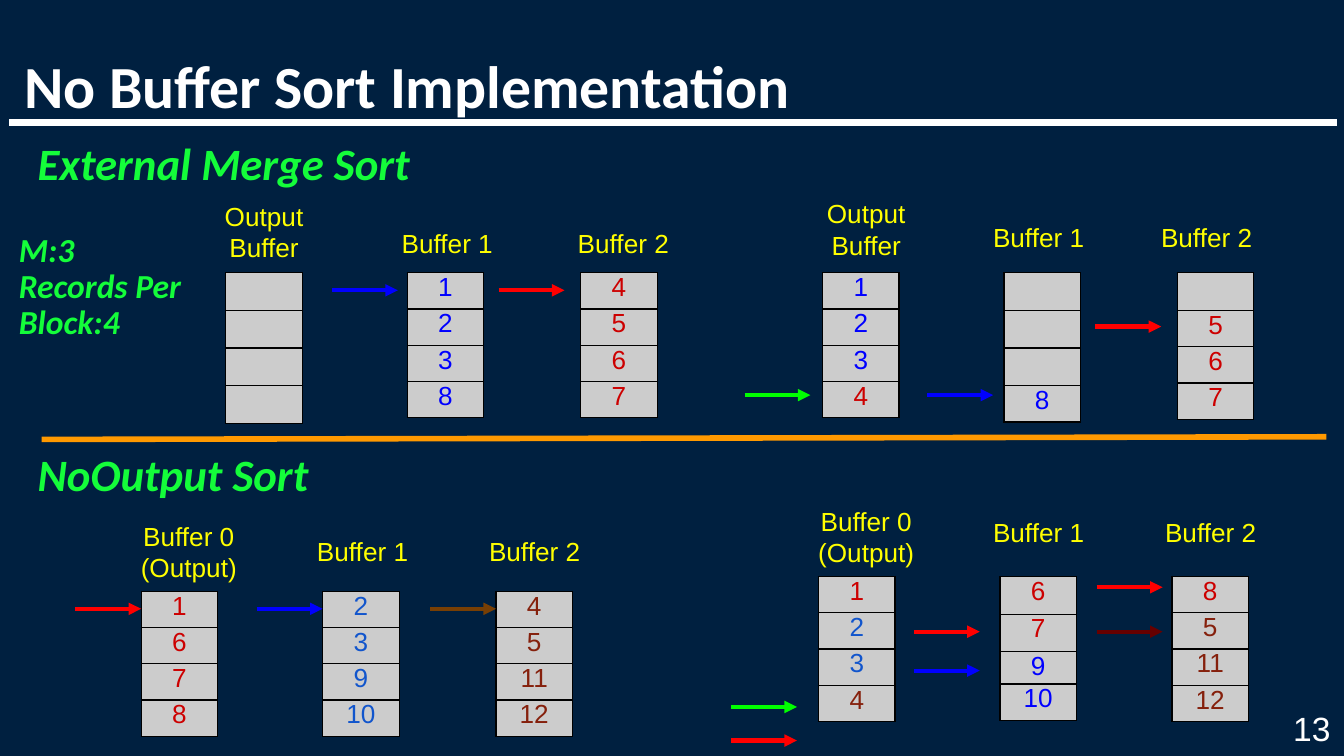
"""Build the slide comparing external merge sort buffers with NoOutput sort buffers."""
from lxml.etree import SubElement
from pptx import Presentation
from pptx.dml.color import RGBColor
from pptx.enum.shapes import MSO_CONNECTOR
from pptx.enum.text import MSO_ANCHOR, PP_ALIGN
from pptx.oxml.ns import qn
from pptx.util import Inches, Pt

NAVY = RGBColor(0x00, 0x20, 0x40)
WHITE = RGBColor(0xFF, 0xFF, 0xFF)
BLACK = RGBColor(0x00, 0x00, 0x00)
GRAY = RGBColor(0xCC, 0xCC, 0xCC)
YELLOW = RGBColor(0xFF, 0xFF, 0x00)
ORANGE = RGBColor(0xFF, 0x99, 0x00)
HEADING_GREEN = RGBColor(0x14, 0xFD, 0x3A)
GREEN = RGBColor(0x00, 0xFF, 0x00)
RED = RGBColor(0xFF, 0x00, 0x00)
BLUE = RGBColor(0x00, 0x00, 0xFF)
BROWN = RGBColor(0x78, 0x3F, 0x04)
MAROON = RGBColor(0x66, 0x00, 0x00)
RECORD_RED = RGBColor(0xCC, 0x00, 0x00)
RECORD_BLUE = RGBColor(0x11, 0x55, 0xCC)
RECORD_BROWN = RGBColor(0x85, 0x20, 0x0C)

TITLE = "No Buffer Sort Implementation"
PAGE_NUMBER = "13"

HEADINGS = [
    ("External Merge Sort", 24, (0.08, 1.01, 3.29, 0.39)),
    ("NoOutput Sort", 24, (0.08, 3.32, 2.33, 0.39)),
    ("M:3\nRecords Per Block:4", 18, (-0.06, 1.69, 1.61, 0.95)),
]

EMPTY = ("", BLACK)
ROW_HEIGHT, EMPTY_ROW_HEIGHT, BUFFER_WIDTH = 0.27, 0.28, 0.57
UNEVEN_ROWS = [0.28, 0.28, 0.24, 0.27]


def records(values, color):
    return [(value, color) for value in values.split()]


BUFFERS = [
    ((1.05, 4.4), "Buffer 0\n(Output)", (0.9, 3.77), records("1 6 7 8", RECORD_RED), None),
    ((2.4, 4.4), "Buffer 1", (2.26, 3.88), records("2 3 9 10", RECORD_BLUE), None),
    ((3.69, 4.4), "Buffer 2", (3.54, 3.88), records("4 5 11 12", RECORD_BROWN), None),
    ((6.09, 4.29), "Buffer 0\n(Output)", (5.94, 3.66),
     records("1", RECORD_RED) + records("2 3", RECORD_BLUE) + records("4", RECORD_BROWN), None),
    ((7.44, 4.29), "Buffer 1", (7.29, 3.74),
     records("6 7", RECORD_RED) + records("9 10", BLUE), UNEVEN_ROWS),
    ((8.72, 4.29), "Buffer 2", (8.57, 3.74),
     records("8", RECORD_RED) + records("5 11 12", RECORD_BROWN), None),
    ((1.68, 2.03), "Output\nBuffer", (1.46, 1.39), [EMPTY] * 4, None),
    ((3.03, 2.03), "Buffer 1", (2.89, 1.59), records("1 2 3 8", BLUE), None),
    ((4.32, 2.03), "Buffer 2", (4.2, 1.59), records("4 5 6 7", RECORD_RED), None),
    ((6.12, 2.03), "Output\nBuffer", (5.94, 1.37),
     records("1 2 3", BLUE) + records("4", RECORD_RED), None),
    ((7.47, 2.03), "Buffer 1", (7.29, 1.55), [EMPTY] * 3 + records("8", BLUE), None),
    ((8.76, 2.03), "Buffer 2", (8.54, 1.55), [EMPTY] + records("5 6 7", RECORD_RED), None),
]

ARROW_LENGTH = 0.49
ARROWS = [
    (0.56, 4.53, RED), (1.91, 4.53, BLUE), (3.2, 4.53, BROWN),
    (5.44, 5.51, RED), (5.44, 5.26, GREEN), (6.8, 4.99, BLUE),
    (8.16, 4.7, MAROON), (6.8, 4.7, RED), (8.16, 4.37, RED),
    (5.54, 2.94, GREEN), (6.9, 2.94, BLUE), (8.15, 2.43, RED),
    (2.47, 2.16, BLUE), (3.71, 2.16, RED),
]


def write(frame, text, size, color, font="Arial", bold=False, italic=False,
          align=PP_ALIGN.LEFT, spacing=None, insets=(0.1, 0.1, 0.1, 0.1)):
    frame.margin_left, frame.margin_top, frame.margin_right, frame.margin_bottom = map(Inches, insets)
    frame.word_wrap = True
    frame.text = text
    for paragraph in frame.paragraphs:
        paragraph.alignment = align
        if spacing:
            paragraph.line_spacing = spacing
        for run in paragraph.runs:
            run.font.name, run.font.size = font, Pt(size)
            run.font.bold, run.font.italic = bold, italic
            run.font.color.rgb = color


def add_text(slide, box, *args, **style):
    write(slide.shapes.add_textbox(*map(Inches, box)).text_frame, *args, **style)


def add_line(slide, start, end, color, width, arrow=False):
    line = slide.shapes.add_connector(MSO_CONNECTOR.STRAIGHT, *map(Inches, start + end))
    line.line.color.rgb = color
    line.line.width = Pt(width)
    if arrow:
        SubElement(line.line._get_or_add_ln(), qn("a:tailEnd"), type="triangle")
    SubElement(line._element.spPr, qn("a:effectLst"))


def add_borders(cell):
    properties = cell._tc.get_or_add_tcPr()
    for position, side in enumerate(("a:lnL", "a:lnR", "a:lnT", "a:lnB")):
        border = SubElement(properties, qn(side), w=str(Pt(0.75)))
        SubElement(SubElement(border, qn("a:solidFill")), qn("a:srgbClr"), val=str(BLACK))
        properties.insert(position, border)


def add_buffer(slide, corner, cells, heights):
    heights = heights or [ROW_HEIGHT if value else EMPTY_ROW_HEIGHT for value, _ in cells]
    box = (*corner, BUFFER_WIDTH, sum(heights))
    table = slide.shapes.add_table(len(cells), 1, *map(Inches, box)).table
    table.first_row = table.horz_banding = False
    for row, (value, color) in enumerate(cells):
        table.rows[row].height = Inches(heights[row])
        cell = table.cell(row, 0)
        if value:
            write(cell.text_frame, value, 14, color, align=PP_ALIGN.CENTER)
        else:
            SubElement(cell.text_frame.paragraphs[0]._p, qn("a:endParaRPr"), sz="1400")
        cell.margin_left = cell.margin_right = Inches(0.1)
        cell.margin_top = cell.margin_bottom = 0
        cell.fill.solid()
        cell.fill.fore_color.rgb = GRAY
        add_borders(cell)


def main():
    deck = Presentation()
    deck.slide_width = Inches(10)
    deck.slide_height = deck.slide_width * 9 // 16
    slide = deck.slides.add_slide(deck.slide_layouts[5])
    slide.background.fill.solid()
    slide.background.fill.fore_color.rgb = NAVY

    title = slide.shapes.title
    title.left, title.top, title.width, title.height = map(Inches, (0.08, 0, 9.83, 0.9))
    write(title.text_frame, TITLE, 32, WHITE, "Calibri", bold=True, spacing=0.89,
          insets=(0.1, 0, 0.1, 0))
    title.text_frame.vertical_anchor = MSO_ANCHOR.BOTTOM
    add_line(slide, (0.07, 0.91), (9.95, 0.91), WHITE, 3.75)
    add_text(slide, (9.57, 5.27, 0.33, 0.21), PAGE_NUMBER, 18, WHITE,
             align=PP_ALIGN.RIGHT, insets=(0, 0, 0, 0))

    for corner, label, label_corner, cells, heights in BUFFERS:
        add_buffer(slide, corner, cells, heights)
        two_lines = "\n" in label
        add_text(slide, (*label_corner, 1.01, 0.57 if two_lines else 0.39), label, 14, YELLOW,
                 align=PP_ALIGN.CENTER if two_lines else PP_ALIGN.LEFT)

    add_line(slide, (0.31, 3.27), (9.87, 3.25), ORANGE, 3)
    for left, top, color in ARROWS:
        add_line(slide, (left, top), (left + ARROW_LENGTH, top), color, 2.25, arrow=True)

    for heading, size, box in HEADINGS:
        add_text(slide, box, heading, size, HEADING_GREEN, "Calibri", bold=True, italic=True,
                 spacing=0.89, insets=(0.2, 0.05, 0.1, 0.05))

    deck.save("out.pptx")


if __name__ == "__main__":
    main()
